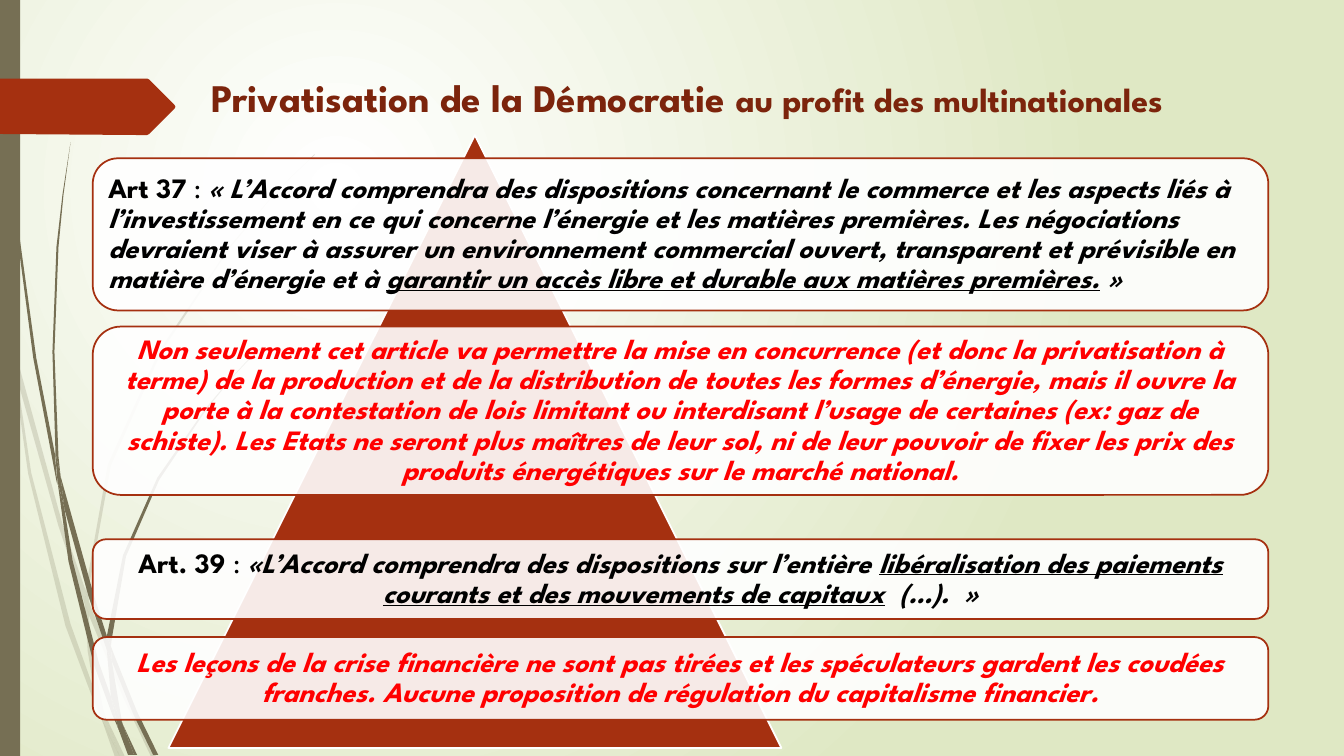
from lxml import etree
from pptx import Presentation
from pptx.dml.color import RGBColor
from pptx.enum.shapes import MSO_SHAPE
from pptx.enum.text import MSO_ANCHOR, MSO_AUTO_SIZE, PP_ALIGN
from pptx.oxml.ns import qn
from pptx.util import Inches, Pt

WHITE = RGBColor(0xFF, 0xFF, 0xFF)
BLACK = RGBColor(0x00, 0x00, 0x00)
RED = RGBColor(0xFF, 0x00, 0x00)
RUST = RGBColor(0xA5, 0x30, 0x10)
DARK_RUST = RGBColor(0x7C, 0x24, 0x0C)
OLIVE = RGBColor(0x76, 0x6F, 0x54)
PALE_GREEN = RGBColor(0xDF, 0xE8, 0xC4)
FONT = "League Spartan"
CARD_LEFT, CARD_WIDTH = 0.92, 11.66
CORNER_INSET = 0.049  # share of a card's height taken by its round corners

# Outlines are (x, y) corners in hundredths of an inch.
PALE_BLADES = [
    [(11, 350), (9, 322), (0, 282), (0, 299), (10, 344)],
    [(58, 522), (84, 599), (85, 586), (62, 520), (14, 345), (17, 376)],
    [(92, 607), (88, 596), (88, 610), (123, 694), (150, 751), (155, 751), (127, 692)],
    [(119, 751), (124, 751), (105, 711)],
    [(93, 683), (70, 619), (31, 469), (17, 376), (11, 350), (28, 470), (65, 621),
     (92, 693), (101, 714), (99, 707)],
    [(84, 599), (87, 646), (93, 683), (96, 692), (105, 711), (103, 706), (91, 646),
     (88, 610), (88, 608)],
    [(88, 584), (110, 462), (160, 349), (229, 245), (268, 198), (290, 175), (312, 154),
     (312, 153), (289, 175), (268, 197), (228, 244), (158, 348), (107, 461), (85, 584),
     (85, 586), (88, 596)],
    [(101, 714), (114, 751), (119, 751)],
    [(88, 608), (88, 610), (88, 596), (85, 586), (84, 599)],
    [(96, 692), (93, 683), (99, 707), (101, 714), (119, 751), (105, 711)],
]
DARK_BLADES = [
    [(7, 110), (17, 233), (33, 355), (56, 477), (57, 481), (55, 457), (55, 453),
     (36, 355), (19, 232), (8, 109), (5, 48), (4, 0), (3, 0), (4, 48)],
    [(88, 592), (106, 645), (106, 631), (93, 590), (60, 472), (64, 505)],
    [(113, 649), (110, 641), (111, 656), (132, 708), (152, 749), (157, 749), (136, 706)],
    [(110, 691), (98, 657), (72, 556), (64, 505), (57, 477), (68, 557), (93, 659),
     (111, 708), (117, 722), (116, 717)],
    [(60, 472), (58, 453), (54, 349), (58, 245), (63, 193), (70, 141), (62, 193),
     (56, 245), (52, 349), (55, 449)],
    [(133, 749), (136, 749), (122, 719)],
    [(57, 477), (64, 505), (60, 472), (55, 449), (55, 453)],
    [(111, 633), (125, 552), (158, 476), (205, 406), (231, 374), (245, 359), (261, 344),
     (260, 344), (245, 358), (231, 373), (204, 405), (156, 474), (122, 551), (106, 631),
     (110, 641)],
    [(117, 722), (127, 749), (131, 749)],
    [(106, 645), (110, 691), (116, 706), (122, 719), (121, 716), (111, 656), (109, 651)],
    [(106, 645), (109, 651), (111, 656), (110, 641), (106, 631)],
    [(116, 706), (110, 691), (116, 717), (117, 722), (130, 749), (133, 749), (122, 719)],
]
TITLE_ARROW = [(173, 108), (148, 133), (146, 134), (136, 134), (0, 133), (0, 78),
               (136, 78), (146, 78), (148, 79), (173, 104), (174, 106)]

# top, height, alignment, then runs of (text, colour, bold, italic, underline)
CARDS = [
    (1.57, 1.51, PP_ALIGN.LEFT, [
        ("Art 37 ", BLACK, True, False, False),
        (": ", BLACK, False, False, False),
        ("« L’Accord comprendra des dispositions concernant le commerce et les "
         "aspects liés à l’investissement en ce qui concerne l’énergie et les "
         "matières premières. Les négociations devraient viser à assurer un "
         "environnement commercial ouvert, transparent et prévisible en matière "
         "d’énergie et à ", BLACK, True, True, False),
        ("garantir un accès libre et durable aux matières premières.",
         BLACK, True, True, True),
        (" »", BLACK, True, True, False)]),
    (3.24, 1.67, PP_ALIGN.CENTER, [
        ("Non seulement cet article va permettre la mise en concurrence (et donc "
         "la privatisation à terme) de la production et de la distribution de "
         "toutes les formes d’énergie, mais il ouvre la porte à la contestation "
         "de lois limitant ou interdisant l’usage de certaines (ex: gaz de "
         "schiste). Les Etats ne seront plus maîtres de leur sol, ni de leur "
         "pouvoir de fixer les prix des produits énergétiques sur le marché "
         "national.", RED, True, True, False)]),
    (5.35, 0.79, PP_ALIGN.CENTER, [
        ("Art. 39 ", BLACK, True, False, False),
        (": ", BLACK, False, False, False),
        ("«L’Accord comprendra des dispositions sur l’entière ",
         BLACK, True, True, False),
        ("libéralisation des paiements courants et des mouvements de capitaux",
         BLACK, True, True, True),
        ("  (…).  »", BLACK, True, True, False)]),
    (6.32, 0.82, PP_ALIGN.CENTER, [
        ("Les leçons de la crise financière ne sont pas tirées et les "
         "spéculateurs gardent les coudées franches. Aucune proposition de "
         "régulation du capitalisme financier.", RED, True, True, False)]),
]


def paint(shape, color, line_color=None, opacity=100):
    shape.shadow.inherit = False
    shape.fill.solid()
    shape.fill.fore_color.rgb = color
    if opacity < 100:
        for tint in shape.element.spPr.findall(qn("a:solidFill") + "/" + qn("a:srgbClr")):
            etree.SubElement(tint, qn("a:alpha"), val=str(opacity * 1000))
    if line_color is None:
        shape.line.fill.background()
    else:
        shape.line.color.rgb = line_color
        shape.line.width = Pt(1.25)


def draw_outline(corners):
    builder = shapes.build_freeform(*corners[0], scale=Inches(0.01))
    builder.add_line_segments(corners[1:], close=True)
    return builder.convert_to_shape()


prs = Presentation()
prs.slide_width, prs.slide_height = Inches(13.33), Inches(7.5)
slide = prs.slides.add_slide(prs.slide_layouts[5])
shapes = slide.shapes

# Background: white glow fading to pale green
backdrop = slide.background.fill
backdrop.gradient()
for stop, color in zip(backdrop.gradient_stops, (WHITE, PALE_GREEN)):
    stop.color.rgb = color
for linear in slide.element.findall(".//" + qn("a:lin")):
    glow = etree.Element(qn("a:path"), path="circle")
    etree.SubElement(glow, qn("a:fillToRect"),
                     l="50000", t="50000", r="100000", b="100000")
    linear.getparent().replace(linear, glow)

# Grass, side band and title arrow
for blades, opacity in ((PALE_BLADES, 20), (DARK_BLADES, 100)):
    for blade in blades:
        paint(draw_outline(blade), OLIVE, opacity=opacity)

side_band = shapes.add_shape(MSO_SHAPE.RECTANGLE, 0, 0, Inches(0.2), prs.slide_height)
paint(side_band, OLIVE)
paint(draw_outline(TITLE_ARROW), RUST)

# Title
title = shapes.title
title.left, title.top = Inches(2), Inches(0.68)
title.width, title.height = Inches(10.58), Inches(0.52)
title_frame = title.text_frame
title_frame.auto_size = MSO_AUTO_SIZE.NONE
title_frame.vertical_anchor = MSO_ANCHOR.TOP
heading = title_frame.paragraphs[0]
heading.alignment = PP_ALIGN.LEFT
for words, size in (("Privatisation de la Démocratie ", 27.9),
                    ("au profit des multinationales", 24.3)):
    run = heading.add_run()
    run.text = words
    run.font.name, run.font.size, run.font.bold = FONT, Pt(size), True
    run.font.color.rgb = DARK_RUST

# Pyramid with the four cards over it
pyramid = shapes.add_shape(MSO_SHAPE.ISOSCELES_TRIANGLE, Inches(1.67), Inches(1.34),
                           Inches(6.08), Inches(6.08))
paint(pyramid, RUST, WHITE)

for top, height, alignment, passages in CARDS:
    card = shapes.add_shape(MSO_SHAPE.ROUNDED_RECTANGLE, Inches(CARD_LEFT), Inches(top),
                            Inches(CARD_WIDTH), Inches(height))
    paint(card, WHITE, RUST, opacity=90)
    inset = CORNER_INSET * height
    article = shapes.add_textbox(Inches(CARD_LEFT + inset), Inches(top + inset),
                                 Inches(CARD_WIDTH - 2 * inset),
                                 Inches(height - 2 * inset))
    frame = article.text_frame
    frame.word_wrap = True
    frame.vertical_anchor = MSO_ANCHOR.MIDDLE
    frame.margin_left = frame.margin_right = Inches(0.08)
    frame.margin_top = frame.margin_bottom = Inches(0.08)
    paragraph = frame.paragraphs[0]
    paragraph.alignment = alignment
    paragraph.line_spacing = 0.9
    for words, color, bold, italic, underline in passages:
        run = paragraph.add_run()
        run.text = words
        run.font.name, run.font.size = FONT, Pt(20)
        run.font.color.rgb = color
        run.font.bold, run.font.italic, run.font.underline = bold, italic, underline

prs.save("out.pptx")
